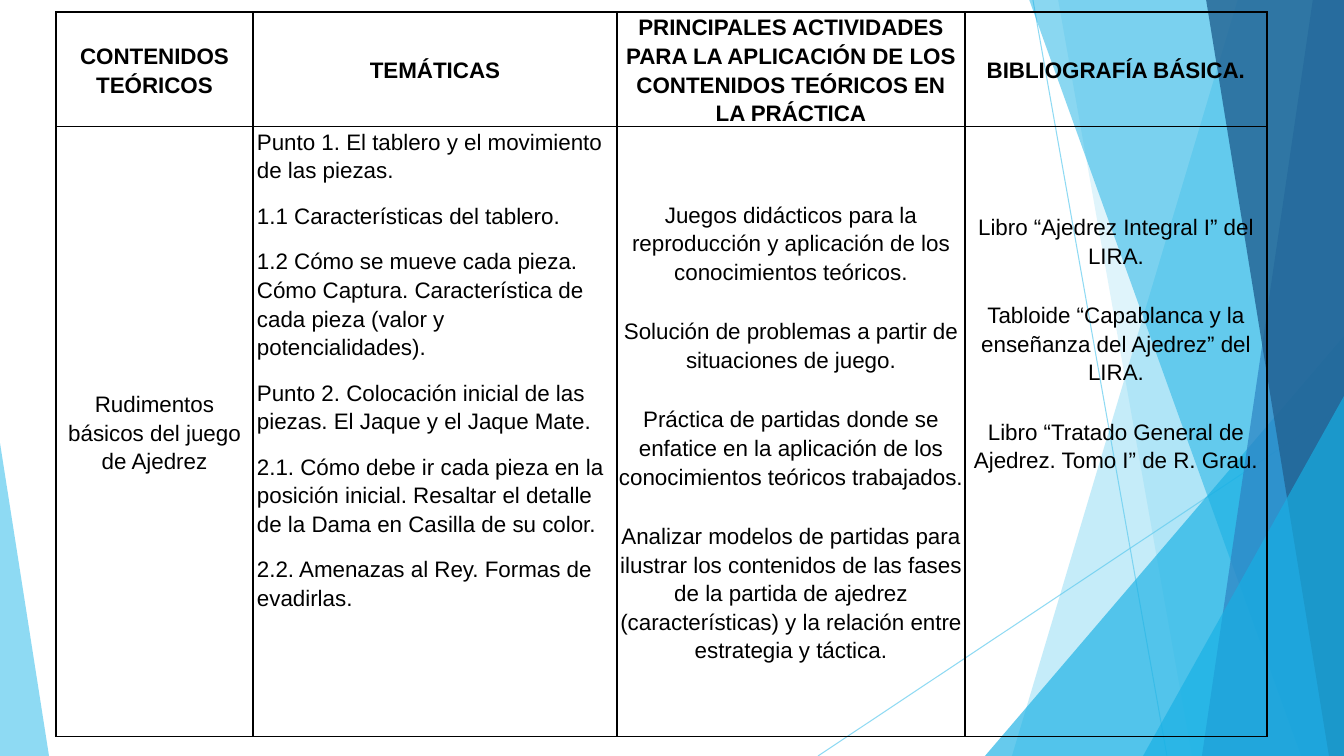
"""Build a slide with a chess syllabus table over a blue faceted backdrop."""
from lxml.etree import SubElement
from pptx import Presentation
from pptx.dml.color import RGBColor
from pptx.enum.shapes import MSO_CONNECTOR, MSO_SHAPE
from pptx.enum.text import MSO_ANCHOR, PP_ALIGN
from pptx.oxml.ns import qn
from pptx.util import Emu, Pt

WIDTH, HEIGHT = 1344, 756
SCALE = 12192000 / WIDTH
THEME = {
    "font": "Arial", "size": 16, "ink": "000000",
    "sky": "5FCBEF", "cyan": "17B0E4", "blue": "2E83C3", "navy": "226292",
    "rule": 0.75, "border": 1,
}


def px(length):
    return Emu(round(length * SCALE))


def write(cell, text, bold=False, align=PP_ALIGN.CENTER, anchor=MSO_ANCHOR.MIDDLE,
          before=12, after=10, left=2, bottom=0):
    cell.vertical_anchor = anchor
    cell.margin_left, cell.margin_right = px(left), px(2)
    cell.margin_top, cell.margin_bottom = 0, px(bottom)
    frame = cell.text_frame
    frame.text = text
    for paragraph in frame.paragraphs:
        paragraph.alignment = align
        paragraph.line_spacing = 1.15
        paragraph.space_before, paragraph.space_after = Pt(before), Pt(after)
        font = paragraph.runs[0].font
        font.name, font.size, font.bold = THEME["font"], Pt(THEME["size"]), bold
        font.color.rgb = RGBColor.from_string(THEME["ink"])


deck = Presentation()
deck.slide_width, deck.slide_height = px(WIDTH), px(HEIGHT)
slide = deck.slides.add_slide(deck.slide_layouts[6])
translucent = []

for x1, y1, x2, y2 in [(1033, 0, 1167, HEIGHT), (WIDTH, 406, 818, HEIGHT)]:
    ray = slide.shapes.add_connector(MSO_CONNECTOR.STRAIGHT, px(x1), px(y1), px(x2), px(y2))
    ray.line.color.rgb = RGBColor.from_string(THEME["sky"])
    ray.line.width = Pt(THEME["rule"])
    SubElement(ray._element.spPr, qn("a:effectLst"))
    translucent.append((ray, 70))

# Bands give top and bottom x; wedges give left, top, width and apex.
facets = [
    ((1238, 1012), "sky", 36),
    ((1058, 1192), "sky", 20),
    ((985, 336, 359, 1), "cyan", 66),
    ((1029, 1301), "cyan", 50),
    ((1313, 1202), "blue", 70),
    ((1206, 1329), "navy", 80),
    ((1143, 396, 201, 1), "cyan", 66),
    ((0, 443, 49, 0), "sky", 70),
]
for outline, color, opacity in facets:
    if len(outline) == 2:
        top_x, bottom_x = outline
        band = slide.shapes.build_freeform(top_x, -1, scale=SCALE)
        band.add_line_segments([(WIDTH, -1), (WIDTH, HEIGHT), (bottom_x, HEIGHT)])
        facet = band.convert_to_shape()
    else:
        left, top, width, apex = outline
        facet = slide.shapes.add_shape(MSO_SHAPE.ISOSCELES_TRIANGLE, px(left), px(top),
                                       px(width), px(HEIGHT - top))
        facet.adjustments[0] = apex
    facet.fill.solid()
    facet.fill.fore_color.rgb = RGBColor.from_string(THEME[color])
    facet.line.fill.background()
    facet.shadow.inherit = False
    translucent.append((facet, opacity))

for part, opacity in translucent:
    for color in part._element.iter(qn("a:srgbClr")):
        SubElement(color, qn("a:alpha"), val=str(opacity * 1000))

headings = [
    "CONTENIDOS TEÓRICOS",
    "TEMÁTICAS",
    "PRINCIPALES ACTIVIDADES PARA LA APLICACIÓN DE LOS CONTENIDOS TEÓRICOS EN LA PRÁCTICA",
    "BIBLIOGRAFÍA BÁSICA.",
]
topics = [
    "Punto 1. El tablero y el movimiento de las piezas.",
    "1.1 Características del tablero.",
    "1.2 Cómo se mueve cada pieza. Cómo Captura. Característica de cada pieza "
    "(valor y potencialidades).",
    "Punto 2. Colocación inicial de las piezas. El Jaque y el Jaque Mate.",
    "2.1. Cómo debe ir cada pieza en la posición inicial. Resaltar el detalle de la Dama "
    "en Casilla de su color.",
    "2.2. Amenazas al Rey. Formas de evadirlas.",
]
activities = [
    "Juegos didácticos para la reproducción y aplicación de los conocimientos teóricos.",
    "Solución de problemas a partir de situaciones de juego.",
    "Práctica de partidas donde se enfatice en la aplicación de los conocimientos teóricos "
    "trabajados.",
    "Analizar modelos de partidas para ilustrar los contenidos de las fases de la partida de "
    "ajedrez (características) y la relación entre estrategia y táctica.",
]
books = [
    "Libro “Ajedrez Integral I” del LIRA.",
    "Tabloide “Capablanca y la enseñanza del Ajedrez” del LIRA.",
    "Libro “Tratado General de Ajedrez. Tomo I” de R. Grau.",
]

column_widths, row_heights = [197, 364, 348, 302], [114, 610]
syllabus = slide.shapes.add_table(2, 4, px(56), px(12), px(sum(column_widths)),
                                  px(sum(row_heights))).table
syllabus.first_row = syllabus.horz_banding = False
for column, width in zip(syllabus.columns, column_widths):
    column.width = px(width)
for row, height in zip(syllabus.rows, row_heights):
    row.height = px(height)

for cell in syllabus.iter_cells():
    properties = cell._tc.get_or_add_tcPr()
    for side in ("a:lnL", "a:lnR", "a:lnT", "a:lnB"):
        border = SubElement(properties, qn(side), w=str(Pt(THEME["border"])))
        SubElement(SubElement(border, qn("a:solidFill")), qn("a:srgbClr"), val=THEME["ink"])
    cell.fill.background()

for index, heading in enumerate(headings):
    write(syllabus.cell(0, index), heading, bold=True)
write(syllabus.cell(1, 0), "Rudimentos básicos del juego de Ajedrez")
write(syllabus.cell(1, 1), "\n".join(topics), align=PP_ALIGN.LEFT, anchor=MSO_ANCHOR.TOP,
      before=6, after=6, left=4)
write(syllabus.cell(1, 2), "\n".join(activities))
write(syllabus.cell(1, 3), "\n".join(books), bottom=178)

deck.save("out.pptx")
